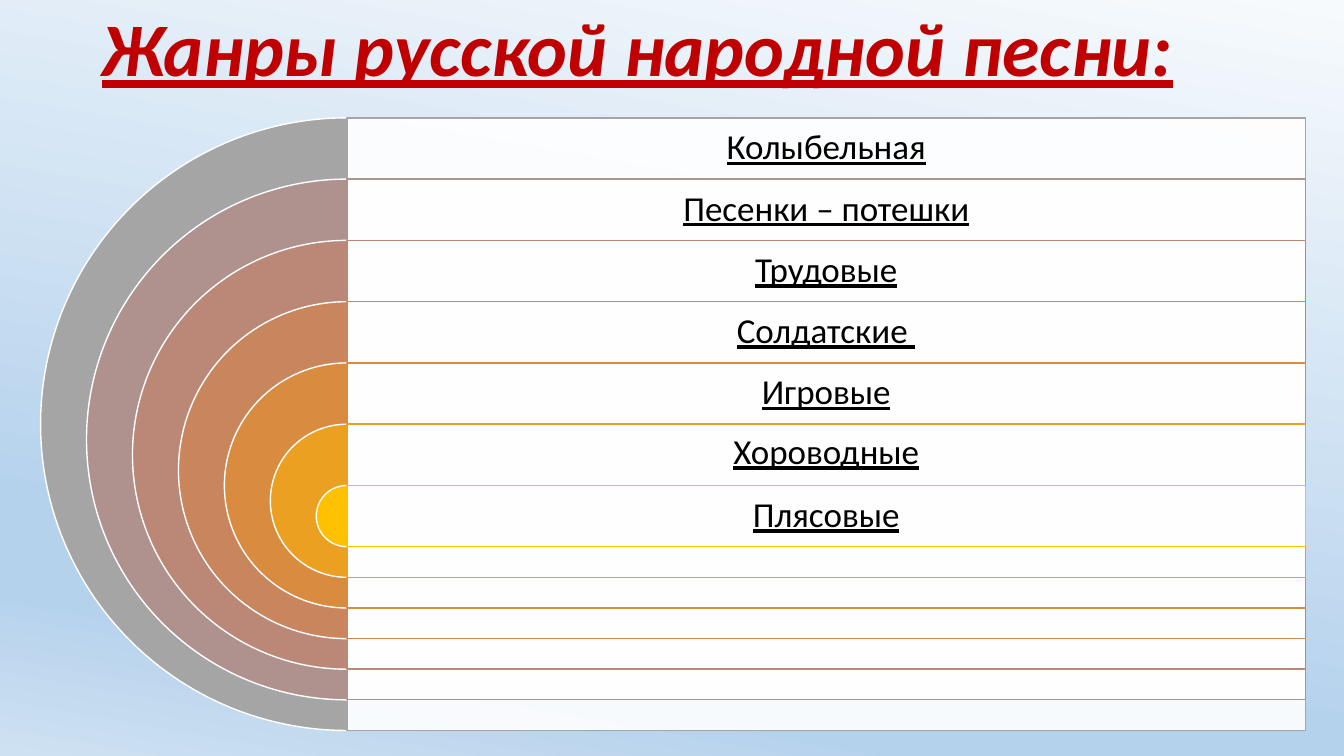
from dataclasses import dataclass

from lxml import etree
from pptx import Presentation
from pptx.dml.color import RGBColor
from pptx.enum import shapes, text
from pptx.oxml import ns
from pptx.util import Pt


@dataclass(frozen=True)
class Theme:
    """Colours, type sizes and line widths of the slide."""
    font: str = "Calibri"
    title: str = "C00000"
    ink: str = "000000"
    paper: str = "FFFFFF"
    rings: tuple = ("A5A5A5", "AF928E", "BB8776", "C9855C", "D98C3F", "EBA021", "FFC000")
    backdrop: tuple = ((0, "F7FAFD"), (74, "B5D2EC"), (83, "B5D2EC"), (100, "CEE1F2"))
    title_size: int = 54
    label_size: int = 25
    line: int = 1


THEME = Theme()
GENRES = ("Колыбельная", "Песенки – потешки", "Трудовые", "Солдатские ",
          "Игровые", "Хороводные", "Плясовые")


def rgb(value):
    """Turn a hex string into a colour."""
    return RGBColor.from_string(value)


def paint_background(s):
    """Lay the slanted blue gradient behind the slide."""
    fill = s.background.fill
    fill.gradient()
    fill.gradient_angle = 260
    stops = next(s.element.iter(ns.qn("a:gsLst")))
    for stop in list(stops):
        stops.remove(stop)
    for position, colour in THEME.backdrop:
        stop = etree.SubElement(stops, ns.qn("a:gs"), pos=str(position * 1000))
        etree.SubElement(stop, ns.qn("a:srgbClr"), val=colour)


def add_line_of_text(tf, content, size, colour, align):
    """Write one underlined line and return its run."""
    p = tf.paragraphs[0]
    p.alignment = align
    p.line_spacing = 0.9
    r = p.add_run()
    r.text = content
    f = r.font
    f.name, f.size, f.underline = THEME.font, Pt(size), True
    f.color.rgb = rgb(colour)
    return r


def add_title(s, content, left, top, width, height):
    """Place and format the title placeholder."""
    sp = s.shapes.title
    sp.left, sp.top, sp.width, sp.height = Pt(left), Pt(top), Pt(width), Pt(height)
    tf = sp.text_frame
    tf.auto_size = text.MSO_AUTO_SIZE.NONE
    tf.vertical_anchor = text.MSO_ANCHOR.BOTTOM
    r = add_line_of_text(tf, content, THEME.title_size, THEME.title, text.PP_ALIGN.LEFT)
    r.font.bold = r.font.italic = True


def add_panel(group, kind, left, top, width, height, fill, line):
    """Add a filled and outlined shape without a shadow."""
    sp = group.shapes.add_shape(kind, Pt(left), Pt(top), Pt(width), Pt(height))
    sp.shadow.inherit = False
    sp.fill.solid()
    sp.fill.fore_color.rgb = rgb(fill)
    sp.line.color.rgb = rgb(line)
    sp.line.width = Pt(THEME.line)
    return sp


def add_label(group, content, left, top, width, height, anchor):
    """Add a centred genre name."""
    sp = group.shapes.add_textbox(Pt(left), Pt(top), Pt(width), Pt(height))
    tf = sp.text_frame
    tf.word_wrap = True
    tf.vertical_anchor = anchor
    tf.margin_left = tf.margin_right = tf.margin_top = tf.margin_bottom = Pt(7.2)
    add_line_of_text(tf, content, THEME.label_size, THEME.ink, text.PP_ALIGN.CENTER)


def add_target_list(s, genres, left, top, width, height):
    """Nest half discs on the left, each with its labelled panel on the right."""
    group = s.shapes.add_group_shape()
    row = height / (1.5 * len(genres) - 0.5)
    axis = left + height / 2
    panel_width = width - height / 2
    for i, (genre, colour) in enumerate(zip(genres, THEME.rings)):
        y = top + i * row
        size = height - 1.5 * i * row
        disc = add_panel(group, shapes.MSO_SHAPE.PIE, axis - size / 2, y, size, size,
                         colour, THEME.paper)
        disc.adjustments[0], disc.adjustments[1] = 54, 162
        panel = add_panel(group, shapes.MSO_SHAPE.RECTANGLE, axis, y, panel_width, size,
                          THEME.paper, colour)
        paper = panel.element.spPr.find(ns.qn("a:solidFill"))[0]
        etree.SubElement(paper, ns.qn("a:alpha"), val="90000")
        anchor = text.MSO_ANCHOR.TOP if genre == "Хороводные" else text.MSO_ANCHOR.MIDDLE
        add_label(group, genre, axis, y, panel_width, row, anchor)


def main():
    """Build and save the slide."""
    prs = Presentation()
    prs.slide_width, prs.slide_height = Pt(960), Pt(540)
    s = prs.slides.add_slide(prs.slide_layouts[5])
    paint_background(s)
    add_title(s, "Жанры русской народной песни:", 65.5, 11.5, 828, 58.3)
    add_target_list(s, GENRES, 29, 84.2, 903.5, 437.6)
    prs.save("out.pptx")


if __name__ == "__main__":
    main()
